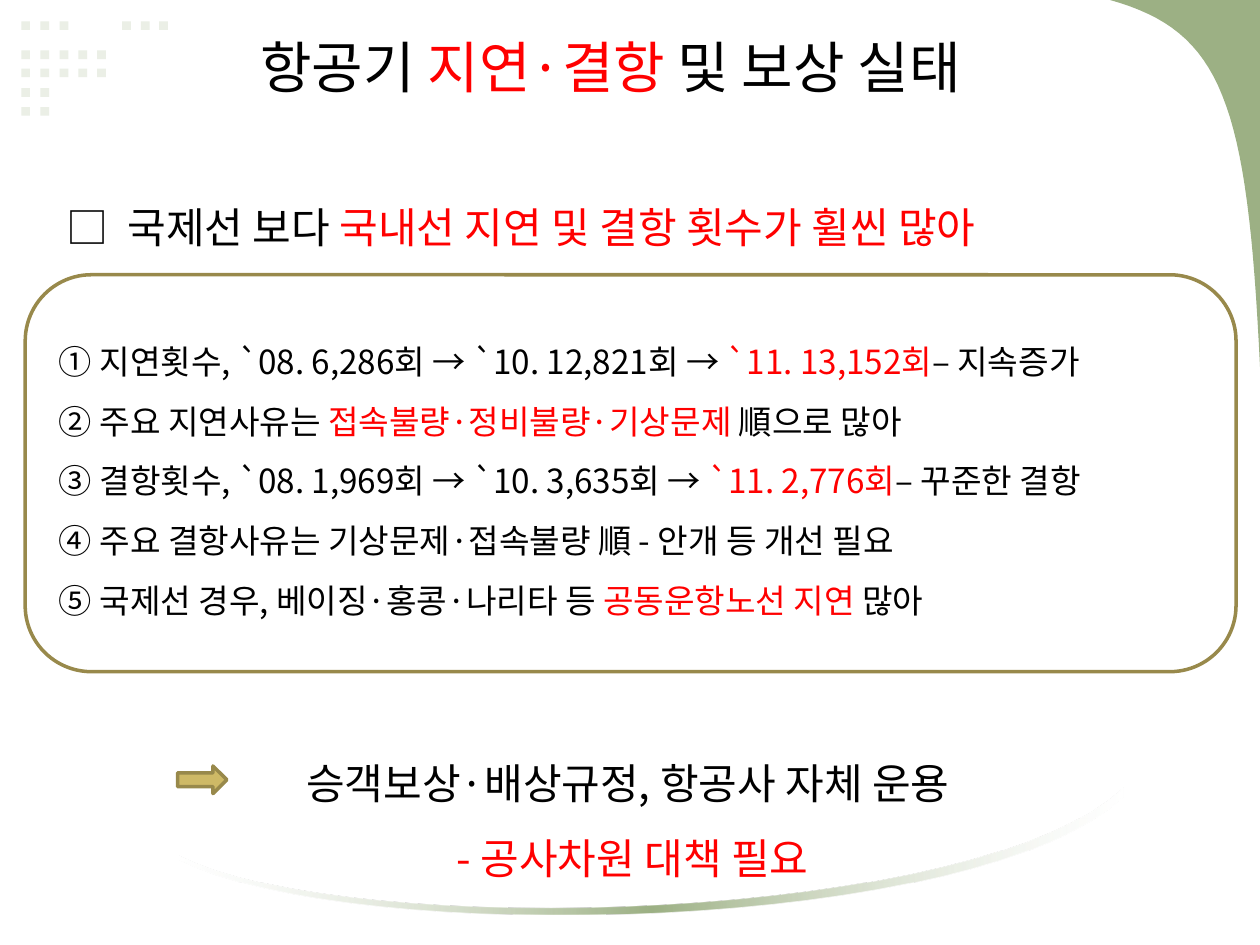
from collections import namedtuple
from dataclasses import dataclass

from lxml import etree
from pptx import Presentation
from pptx.dml.color import RGBColor
from pptx.enum.shapes import MSO_SHAPE
from pptx.enum.text import MSO_ANCHOR, MSO_AUTO_SIZE, PP_ALIGN
from pptx.oxml.ns import qn
from pptx.util import Pt

RECTANGLE = MSO_SHAPE.RECTANGLE
ROUNDED = MSO_SHAPE.ROUNDED_RECTANGLE
ARROW = MSO_SHAPE.RIGHT_ARROW
LEFT, CENTER = PP_ALIGN.LEFT, PP_ALIGN.CENTER
TOP = MSO_ANCHOR.TOP
FIT_SHAPE = MSO_AUTO_SIZE.SHAPE_TO_FIT_TEXT
TITLE_ONLY = 5

Box = namedtuple("Box", "left top width height")


@dataclass(frozen=True)
class Theme:
    font: str = "Noto Sans CJK KR"
    text: str = "000000"
    accent: str = "FF0000"
    dot: str = "EBEFE6"
    green: str = "9CB084"
    white: str = "FFFFFF"
    gold: str = "CEB966"
    outline: str = "98894B"
    title_size: int = 32
    heading_size: int = 24
    body_size: int = 19


THEME = Theme()

TITLE = [[("항공기 ", THEME.text), ("지연·결항 ", THEME.accent), ("및 보상 실태", THEME.text)]]
HEADING = [[("□  국제선 보다 ", THEME.text), ("국내선 지연 및 결항 횟수가 휠씬 많아", THEME.accent)]]
FINDINGS = [
    [("① 지연횟수, `08. 6,286회 → `10. 12,821회 → ", THEME.text),
     ("`11. 13,152회", THEME.accent), ("– 지속증가", THEME.text)],
    [("② 주요 지연사유는 ", THEME.text),
     ("접속불량·정비불량·기상문제 ", THEME.accent), ("順으로 많아", THEME.text)],
    [("③ 결항횟수, `08. 1,969회 → `10. 3,635회 → ", THEME.text),
     ("`11. 2,776회", THEME.accent), ("– 꾸준한 결항", THEME.text)],
    [("④ 주요 결항사유는 기상문제·접속불량 順 - 안개 등 개선 필요", THEME.text)],
    [("⑤ 국제선 경우, 베이징·홍콩·나리타 등 ", THEME.text),
     ("공동운항노선 지연 ", THEME.accent), ("많아", THEME.text)],
]
CONCLUSION = [
    [("승객보상·배상규정, 항공사 자체 운용 ", THEME.text)],
    [("- 공사차원 대책 필요", THEME.accent)],
]


def place(shape, box):
    shape.left, shape.top, shape.width, shape.height = (Pt(length) for length in box)


def write_text(shape, paragraphs, size, align=LEFT, spacing=1.0, wrap=True):
    frame = shape.text_frame
    frame.word_wrap = wrap
    frame.auto_size = FIT_SHAPE
    frame.vertical_anchor = TOP
    for index, runs in enumerate(paragraphs):
        paragraph = frame.add_paragraph() if index else frame.paragraphs[0]
        paragraph.alignment = align
        paragraph.line_spacing = spacing
        paragraph.space_before = Pt(0)
        for text, color in runs:
            run = paragraph.add_run()
            run.text = text
            run.font.size = Pt(size)
            run.font.name = THEME.font
            run.font.color.rgb = RGBColor.from_string(color)
            east_asian = etree.SubElement(run.font._element, qn("a:ea"))
            east_asian.set("typeface", THEME.font)


def add_text(slide, box, paragraphs, size, **options):
    shape = slide.shapes.add_textbox(*(Pt(length) for length in box))
    write_text(shape, paragraphs, size, **options)


def paint(shape, fill=None, line=None):
    shape.shadow.inherit = False
    if fill:
        shape.fill.solid()
        shape.fill.fore_color.rgb = RGBColor.from_string(fill)
    else:
        shape.fill.background()
    if line:
        shape.line.color.rgb = RGBColor.from_string(line)
        shape.line.width = Pt(2)
    else:
        shape.line.fill.background()


def add_preset(slide, preset, box, fill=None, line=None):
    shape = slide.shapes.add_shape(preset, *(Pt(length) for length in box))
    paint(shape, fill, line)


def bezier(start, first, second, end, steps=32):
    points = []
    for step in range(steps + 1):
        t = step / steps
        weights = ((1 - t) ** 3, 3 * t * (1 - t) ** 2, 3 * t ** 2 * (1 - t), t ** 3)
        points.append(tuple(
            sum(weight * value for weight, value in zip(weights, values))
            for values in zip(start, first, second, end)))
    return points


def add_outline(slide, box, points):
    vertices = [(Pt(box.left + x), Pt(box.top + y)) for x, y in points]
    builder = slide.shapes.build_freeform(*vertices[0])
    builder.add_line_segments(vertices[1:], close=True)
    shape = builder.convert_to_shape()
    paint(shape, THEME.green)
    return shape


def fade_ends(shape):
    shape.fill.gradient()
    shape.fill.gradient_angle = 0
    stops = shape._element.spPr.find(qn("a:gradFill")).find(qn("a:gsLst"))
    for stop in list(stops):
        stops.remove(stop)
    for position, color, opacity in ((0, THEME.white, 30), (50, THEME.green, 100), (100, THEME.white, 30)):
        stop = etree.SubElement(stops, qn("a:gs"), pos=str(position * 1000))
        rgb = etree.SubElement(stop, qn("a:srgbClr"), val=color)
        etree.SubElement(rgb, qn("a:alpha"), val=str(opacity * 1000))


def add_dots(slide, box):
    columns = (0, 10.9, 21.9, 32.6, 43.4, 57.6, 68.4, 78.8)
    rows = ((0, (0, 1, 2, 5, 6, 7)), (16.6, range(5)), (27, range(5)), (38.2, (0, 1)), (49, (0, 1)))
    for top, filled in rows:
        for column in filled:
            dot = Box(box.left + columns[column], box.top + top, 5, 5)
            add_preset(slide, RECTANGLE, dot, THEME.dot)


def add_corner(slide, box):
    edge = bezier((box.width, box.height), (78.5, 57.6), (64, 18), (0, 0))
    add_outline(slide, box, edge + [(box.width, 0)])


def add_swoosh(slide, box):
    upper = bezier((0, 38.9), (97.2, 87.8), (459.4, 77.8), (box.width, 0))
    lower = bezier((0, 41), (97.2, 91.4), (459.4, 83.5), (box.width, 5))
    fade_ends(add_outline(slide, box, upper + lower[::-1]))


def add_title(slide, box):
    title = slide.shapes.title
    place(title, box)
    write_text(title, TITLE, THEME.title_size, align=CENTER, wrap=False)


def add_findings(slide, box):
    text_box = Box(box.left + 12.2, box.top + 23, box.width - 23, 180)
    add_text(slide, text_box, FINDINGS, THEME.body_size, spacing=1.5)
    add_preset(slide, ROUNDED, box, line=THEME.outline)


def add_conclusion(slide, box):
    add_text(slide, box, CONCLUSION, THEME.heading_size, align=CENTER, spacing=1.5)
    arrow = Box(box.left + 66.2, box.top + 23, 28.1, 15.8)
    add_preset(slide, ARROW, arrow, THEME.gold, THEME.outline)


def main():
    presentation = Presentation()
    presentation.slide_width, presentation.slide_height = Pt(720), Pt(540)
    slide = presentation.slides.add_slide(presentation.slide_layouts[TITLE_ONLY])
    add_dots(slide, Box(12.2, 12.2, 84, 54))
    add_corner(slide, Box(634.3, 0, 85.7, 209.5))
    add_swoosh(slide, Box(102.2, 450, 540, 72))
    add_title(slide, Box(110.2, 15.1, 477.4, 46.1))
    add_text(slide, Box(31, 111.6, 607, 36), HEADING, THEME.heading_size)
    add_findings(slide, Box(14.4, 157, 691.9, 226.8))
    add_conclusion(slide, Box(35.3, 414.7, 652.3, 94.3))
    presentation.save("out.pptx")


if __name__ == "__main__":
    main()
